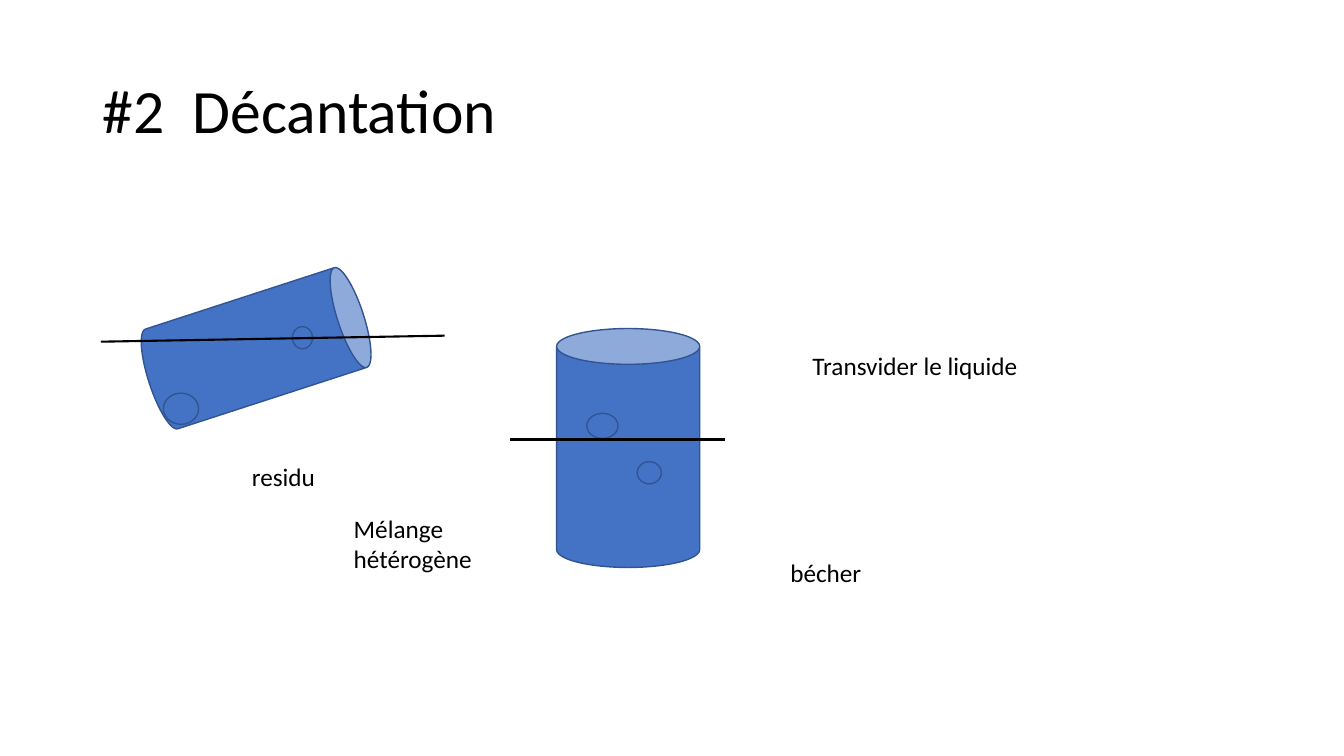
from dataclasses import dataclass

from lxml.etree import SubElement
from pptx import Presentation
from pptx.dml.color import RGBColor
from pptx.enum.shapes import MSO_CONNECTOR, MSO_SHAPE
from pptx.enum.text import MSO_ANCHOR, PP_ALIGN
from pptx.oxml.ns import qn
from pptx.slide import Slide
from pptx.text.text import TextFrame
from pptx.util import Inches, Pt

COLOURS = {"glass": "4472C4", "outline": "325491", "ink": "000000"}
FONT = "Calibri"


@dataclass(frozen=True)
class Solid:
    kind: MSO_SHAPE
    left: float
    top: float
    width: float
    height: float
    rotation: float = 0


@dataclass(frozen=True)
class Label:
    text: str
    left: float
    top: float
    width: float
    height: float = 0.4


@dataclass(frozen=True)
class Level:
    start: tuple[float, float]
    end: tuple[float, float]


SOLIDS = [
    Solid(MSO_SHAPE.CAN, 2.02, 2.34, 1.04, 2.23, 72),
    Solid(MSO_SHAPE.FLOWCHART_CONNECTOR, 2.9, 3.24, 0.2, 0.22),
    Solid(MSO_SHAPE.FLOWCHART_CONNECTOR, 1.62, 3.9, 0.35, 0.31),
    Solid(MSO_SHAPE.CAN, 5.52, 3.26, 1.42, 2.37),
    Solid(MSO_SHAPE.FLOWCHART_CONNECTOR, 5.82, 4.1, 0.31, 0.25),
    Solid(MSO_SHAPE.FLOWCHART_CONNECTOR, 6.32, 4.58, 0.24, 0.22),
]
LABELS = [
    Label("residu", 2.4, 4.53, 1.41),
    Label("Transvider le liquide", 7.96, 3.43, 2.89),
    Label("bécher", 7.74, 5.48, 1.67),
    Label("Mélange hétérogène", 3.41, 5.04, 1.59, 0.71),
]
LEVELS = [
    Level((5.06, 4.36), (7.19, 4.36)),
    Level((1, 3.39), (4.41, 3.33)),
]


def colour(name: str) -> RGBColor:
    return RGBColor.from_string(COLOURS[name])


def write(frame: TextFrame, text: str, size: float) -> None:
    frame.word_wrap = True
    span = frame.paragraphs[0].add_run()
    span.text = text
    for name, value in {"name": FONT, "size": Pt(size)}.items():
        setattr(span.font, name, value)
    span.font.color.rgb = colour("ink")


def add_title(page: Slide, text: str) -> None:
    title = page.shapes.title
    place = {"left": 0.92, "top": 0.4, "width": 11.5, "height": 1.45}
    for name, value in place.items():
        setattr(title, name, Inches(value))
    write(title.text_frame, text, 44)
    title.text_frame.vertical_anchor = MSO_ANCHOR.MIDDLE
    for name, value in {"alignment": PP_ALIGN.LEFT, "line_spacing": 0.9}.items():
        setattr(title.text_frame.paragraphs[0], name, value)


def add_solid(page: Slide, solid: Solid) -> None:
    shape = page.shapes.add_shape(
        solid.kind,
        Inches(solid.left),
        Inches(solid.top),
        Inches(solid.width),
        Inches(solid.height),
    )
    shape.rotation = solid.rotation
    shape.shadow.inherit = False
    shape.fill.solid()
    shape.fill.fore_color.rgb = colour("glass")
    shape.line.color.rgb = colour("outline")
    shape.line.width = Pt(1)


def add_label(page: Slide, label: Label) -> None:
    box = page.shapes.add_textbox(
        Inches(label.left),
        Inches(label.top),
        Inches(label.width),
        Inches(label.height),
    )
    write(box.text_frame, label.text, 18)


def add_level(page: Slide, level: Level) -> None:
    ends = [Inches(value) for value in level.start + level.end]
    line = page.shapes.add_connector(MSO_CONNECTOR.STRAIGHT, *ends)
    line.line.color.rgb = colour("ink")
    line.line.width = Pt(1.5)
    SubElement(line._element.spPr, qn("a:effectLst"))


def main() -> None:
    deck = Presentation()
    deck.slide_width, deck.slide_height = Inches(13.33), Inches(7.5)
    page = deck.slides.add_slide(deck.slide_layouts[5])
    add_title(page, "#2  Décantation")
    for solid in SOLIDS:
        add_solid(page, solid)
    for label in LABELS:
        add_label(page, label)
    for level in LEVELS:
        add_level(page, level)
    deck.save("out.pptx")


if __name__ == "__main__":
    main()
